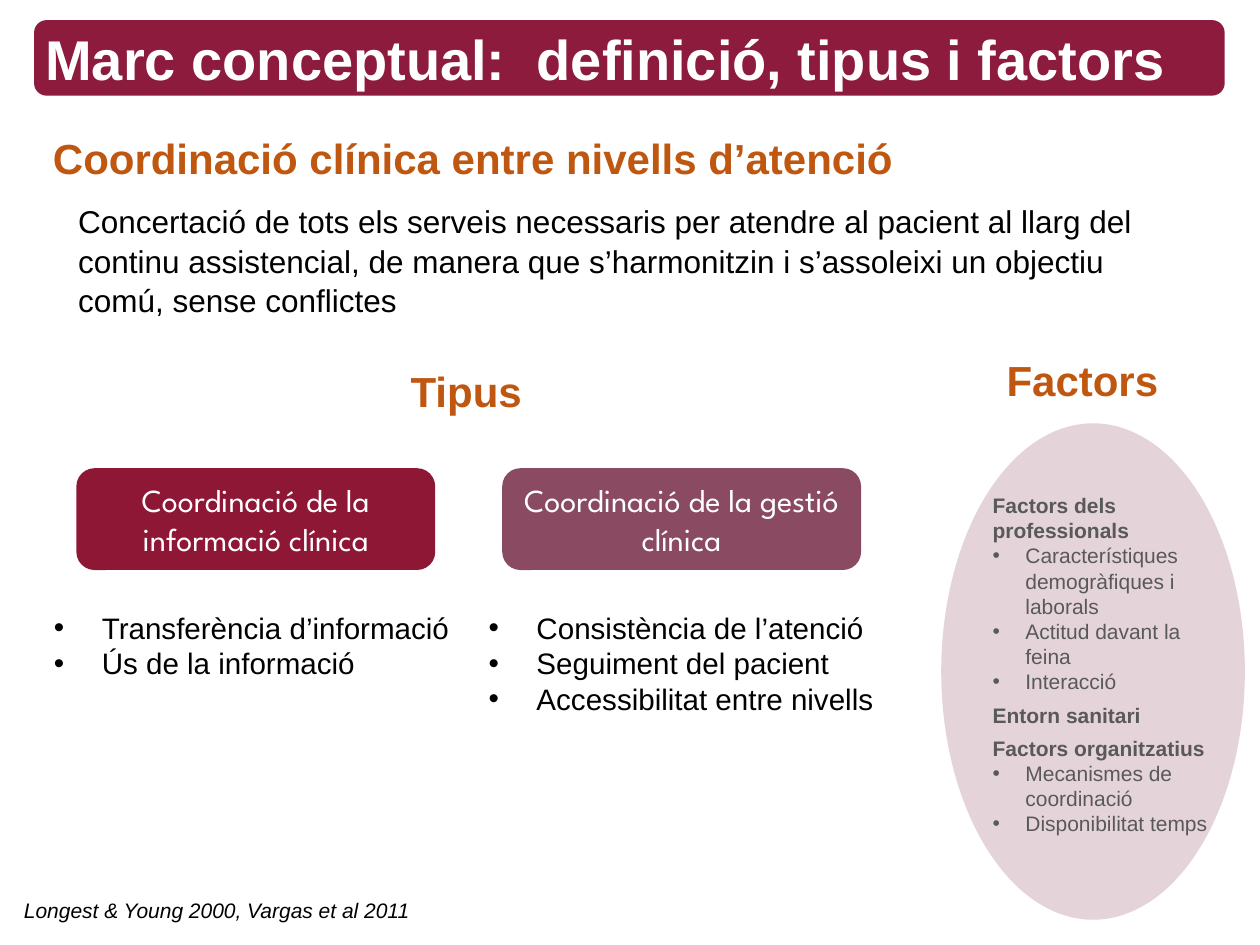
from lxml import etree
from pptx import Presentation
from pptx.dml.color import RGBColor
from pptx.enum.shapes import MSO_SHAPE
from pptx.enum.text import MSO_ANCHOR, MSO_AUTO_SIZE, PP_ALIGN
from pptx.oxml.ns import qn
from pptx.util import Inches, Pt

ROUND, OVAL = MSO_SHAPE.ROUNDED_RECTANGLE, MSO_SHAPE.OVAL
TOP, MIDDLE, BOTTOM = MSO_ANCHOR.TOP, MSO_ANCHOR.MIDDLE, MSO_ANCHOR.BOTTOM
LEFT, CENTER = PP_ALIGN.LEFT, PP_ALIGN.CENTER
NO_FIT = MSO_AUTO_SIZE.NONE

WINE, ORANGE, BLACK, WHITE, GRAY = "8D1B3D", "BF5711", "000000", "FFFFFF", "595959"

TITLE = "Marc conceptual:  definició, tipus i factors"
HEADING = "Coordinació clínica entre nivells d’atenció"
DEFINITION = ("Concertació de tots els serveis necessaris per atendre al pacient al llarg del "
              "continu assistencial, de manera que s’harmonitzin i s’assoleixi un objectiu comú, "
              "sense conflictes")
SOURCE = "Longest & Young 2000, Vargas et al 2011"
LABELS = [("Tipus", 2.51, 2.86), ("Factors", 7.4, 2.77)]
TYPES = [
    ("Coordinació de la informació clínica", "8E1736",
     ["Transferència d’informació", "Ús de la informació"]),
    ("Coordinació de la gestió clínica", "894A62",
     ["Consistència de l’atenció", "Seguiment del pacient", "Accessibilitat entre nivells"]),
]
FACTORS = [
    ("Factors dels professionals",
     ["Característiques demogràfiques i laborals", "Actitud davant la feina", "Interacció"]),
    ("Entorn sanitari", []),
    ("Factors organitzatius", ["Mecanismes de coordinació", "Disponibilitat temps"]),
]

CARD_X, CARD_STEP = 0.62, 3.38
LIST_X, LIST_STEP = 0.33, 3.45

HEAD = dict(size=24, color=ORANGE, bold=True)
BULLET = dict(size=16.9, hang=0.38)
FACTOR_HEAD = dict(size=12, color=GRAY, bold=True)
FACTOR_ITEM = dict(size=12, color=GRAY, hang=0.26)


def rgb(value):
    return RGBColor.from_string(value)


def place(sp, box):
    for name, value in zip(("left", "top", "width", "height"), box):
        setattr(sp, name, Inches(value))


def add_shape(s, kind, box, color):
    sp = s.shapes.add_shape(kind, *map(Inches, box))
    sp.shadow.inherit = False
    sp.fill.solid()
    sp.fill.fore_color.rgb = rgb(color)
    sp.line.fill.background()
    return sp


def format_paragraph(p, text, size, color=BLACK, bold=False, italic=False, name="Arial",
                     align=LEFT, before=0, spacing=1.0, hang=0, indent=0):
    pPr = p._p.get_or_add_pPr()
    pPr.set("marL", str(Inches(hang or indent)))
    pPr.set("indent", str(-Inches(hang)))
    for key, value in dict(alignment=align, space_before=Pt(before), space_after=Pt(0),
                           line_spacing=spacing).items():
        setattr(p, key, value)
    if hang:
        etree.SubElement(pPr, qn("a:buFont")).set("typeface", "Arial")
        etree.SubElement(pPr, qn("a:buChar")).set("char", "•")
    else:
        etree.SubElement(pPr, qn("a:buNone"))
    r = p.add_run()
    r.text = text
    for key, value in dict(size=Pt(size), bold=bold, italic=italic, name=name).items():
        setattr(r.font, key, value)
    r.font.color.rgb = rgb(color)


def write(sp, paragraphs, anchor=TOP, insets=(0.1, 0.05, 0.1, 0.05)):
    tf = sp.text_frame
    for key, value in dict(word_wrap=True, auto_size=NO_FIT, vertical_anchor=anchor).items():
        setattr(tf, key, value)
    for side, value in zip(("left", "top", "right", "bottom"), insets):
        setattr(tf, f"margin_{side}", Inches(value))
    for i, (text, style) in enumerate(paragraphs):
        p = tf.add_paragraph() if i else tf.paragraphs[0]
        format_paragraph(p, text, **style)


def add_text(s, box, paragraphs, **options):
    write(s.shapes.add_textbox(*map(Inches, box)), paragraphs, **options)


def main():
    prs = Presentation()
    prs.slide_width, prs.slide_height = Inches(10), Inches(7.5)
    s = prs.slides.add_slide(prs.slide_layouts[1])
    title, body = s.placeholders

    bar = add_shape(s, ROUND, (0.27, 0.16, 9.45, 0.6), WINE)
    s.shapes._spTree.insert(2, bar._element)

    place(title, (0.26, 0.22, 9.25, 0.55))
    write(title, [(TITLE, dict(size=32, color=WHITE, bold=True, spacing=0.9))], anchor=MIDDLE)
    place(body, (0.32, 1, 9.29, 1.65))
    write(body, [(HEADING, HEAD),
                 (DEFINITION, dict(size=18, before=10, spacing=1.05, indent=0.2))])

    for text, x, y in LABELS:
        add_text(s, (x, y, 2.38, 0.46), [(text, dict(HEAD, align=CENTER))],
                 insets=(0.07, 0.04, 0.07, 0.04))

    for i, (name, color, items) in enumerate(TYPES):
        card = add_shape(s, ROUND, (CARD_X + i * CARD_STEP, 3.73, 2.82, 0.78), color)
        card.line.color.rgb = rgb(color)
        card.line.width = Pt(2)
        write(card, [(name, dict(size=18.3, color=WHITE, name="League Spartan", align=CENTER))],
              anchor=MIDDLE)
        add_text(s, (LIST_X + i * LIST_STEP, 4.79, 3.56, 0.1 + 0.29 * len(items)),
                 [(item, BULLET) for item in items])

    oval = add_shape(s, OVAL, (7.47, 3.36, 2.41, 3.94), "D6B8C4")
    color_node = oval._element.spPr.find(qn("a:solidFill"))[0]
    etree.SubElement(color_node, qn("a:alpha")).set("val", "62000")
    lines = []
    for group, items in FACTORS:
        lines.append((group, dict(FACTOR_HEAD, before=4.6 if lines else 0)))
        lines += [(item, FACTOR_ITEM) for item in items]
    add_text(s, (7.78, 3.86, 2.02, 2.86), lines)

    add_text(s, (0.19, 7.06, 3.63, 0.31), [(SOURCE, dict(size=12, italic=True))],
             anchor=BOTTOM, insets=(0, 0.05, 0.1, 0.05))
    prs.save("out.pptx")


if __name__ == "__main__":
    main()
